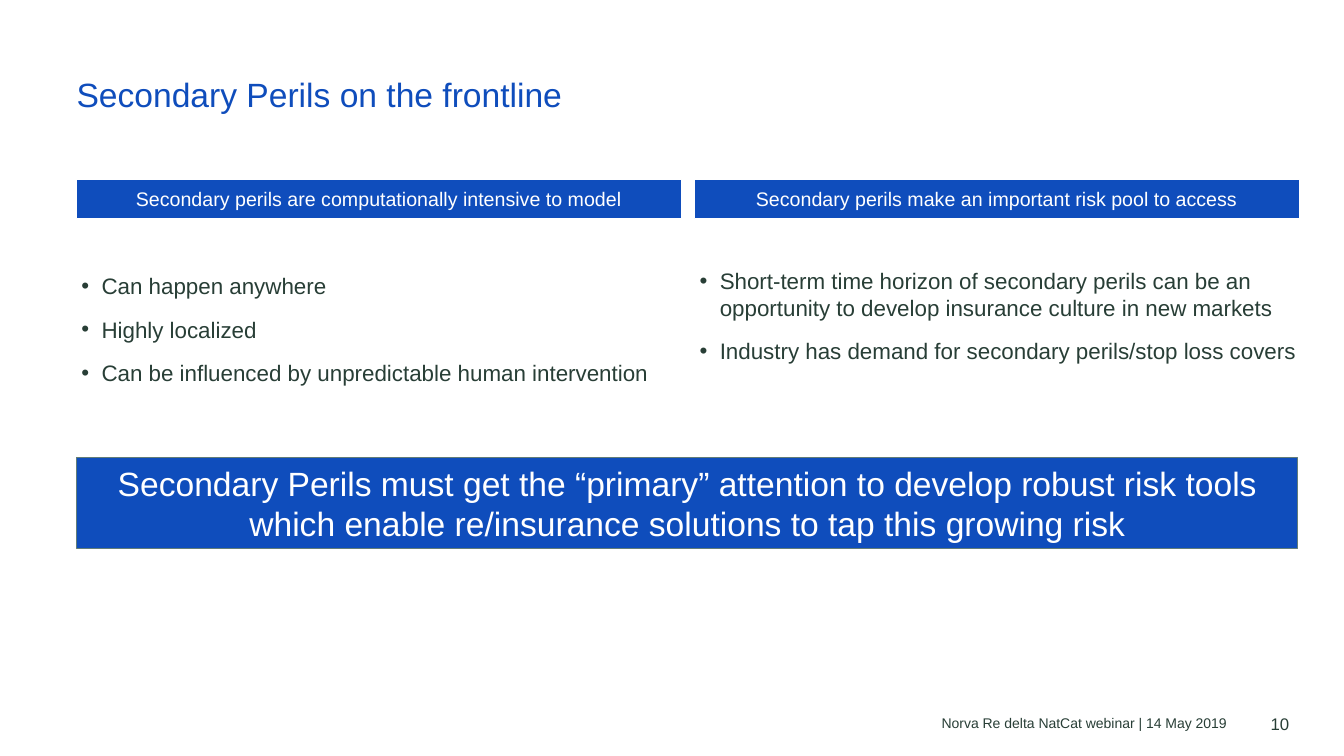
from lxml import etree
from pptx import Presentation
from pptx import util as u
from pptx.dml.color import RGBColor
from pptx.enum import shapes, text
from pptx.oxml.ns import qn

COLOURS = {"blue": "0F4DBC", "ink": "283E36", "white": "FFFFFF", "edge": "627D77"}
LEFT = 1.93
COLUMN_WIDTH = 15.24
COLUMN_STEP = 15.57
HEADER_TOP = 4.52
BULLETS_TOP = 6.73
INSET = 0.25
INDENT = u.Cm(0.51)

COLUMNS = [
    ("Secondary perils are computationally intensive to model",
     ["Can happen anywhere", "Highly localized",
      "Can be influenced by unpredictable human intervention"]),
    ("Secondary perils make an important risk pool to access",
     ["Short-term time horizon of secondary perils can be an opportunity "
      "to develop insurance culture in new markets",
      "Industry has demand for secondary perils/stop loss covers"]),
]


def colour(name):
    return RGBColor.from_string(COLOURS[name])


def set_frame(shape, inset, anchor):
    frame = shape.text_frame
    frame.word_wrap = True
    frame.vertical_anchor = anchor
    frame.margin_left = frame.margin_right = u.Cm(inset)
    frame.margin_top = frame.margin_bottom = u.Cm(inset / 2)
    return frame


def write(para, words, size, ink, align=text.PP_ALIGN.LEFT):
    para.alignment = align
    span = para.add_run()
    span.text = words
    span.font.name = "Arial"
    span.font.size = u.Pt(size)
    span.font.color.rgb = colour(ink)


def add_label(page, box, words, size, ink="ink", align=text.PP_ALIGN.RIGHT,
              anchor=text.MSO_ANCHOR.BOTTOM):
    label = page.shapes.add_textbox(*map(u.Cm, box))
    para = set_frame(label, 0, anchor).paragraphs[0]
    write(para, words, size, ink, align)
    return para


def add_title(page, box, words):
    para = add_label(page, box, words, 24, "blue", text.PP_ALIGN.LEFT, text.MSO_ANCHOR.TOP)
    para.line_spacing = 0.9


def add_banner(page, box, words, size, edge):
    banner = page.shapes.add_shape(shapes.MSO_SHAPE.RECTANGLE, *map(u.Cm, box))
    banner.shadow.inherit = False
    banner.fill.solid()
    banner.fill.fore_color.rgb = colour("blue")
    banner.line.color.rgb = colour(edge)
    banner.line.width = u.Pt(0.75)
    para = set_frame(banner, INSET, text.MSO_ANCHOR.MIDDLE).paragraphs[0]
    write(para, words, size, "white", text.PP_ALIGN.CENTER)


def add_bullets(page, box, items, inset):
    listing = page.shapes.add_textbox(*map(u.Cm, box))
    frame = set_frame(listing, inset, text.MSO_ANCHOR.TOP)
    for index, item in enumerate(items):
        para = frame.add_paragraph() if index else frame.paragraphs[0]
        properties = para._p.get_or_add_pPr()
        properties.set("marL", str(INDENT))
        properties.set("indent", str(-INDENT))
        etree.SubElement(properties, qn("a:buFont")).set("typeface", "Arial")
        etree.SubElement(properties, qn("a:buChar")).set("char", "•")
        if index:
            para.space_before = u.Pt(12)
        write(para, item, 16, "ink")
    return listing


def add_columns(page, left, top):
    (first_heading, first_items), (second_heading, second_items) = COLUMNS
    second_left = left + COLUMN_STEP
    listing = add_bullets(page, (second_left + 0.13, BULLETS_TOP, 15.32, 10.19), second_items, 0)
    listing.fill.solid()
    listing.fill.fore_color.rgb = colour("white")
    add_bullets(page, (left - 0.13, BULLETS_TOP, 15.37, 3.18), first_items, INSET)
    for x, heading in ((left, first_heading), (second_left, second_heading)):
        add_banner(page, (x, top, COLUMN_WIDTH, 0.99), heading, 14, "white")


def add_footer(page, top):
    add_label(page, (9.04, top + 0.08, 21.87, 0.38),
              "Norva Re delta NatCat webinar | 14 May 2019", 10)
    add_label(page, (31.7, top, 0.79, 0.51), "10", 12)


def main():
    deck = Presentation()
    deck.slide_width, deck.slide_height = u.Cm(33.87), u.Cm(19.05)
    page = deck.slides.add_slide(deck.slide_layouts[6])
    add_title(page, (LEFT, 1.98, 30.61, 1.93), "Secondary Perils on the frontline")
    add_columns(page, LEFT, HEADER_TOP)
    add_banner(page, (LEFT, 11.53, 30.78, 2.29),
               "Secondary Perils must get the “primary” attention to develop robust risk tools "
               "which enable re/insurance solutions to tap this growing risk", 24, "edge")
    add_footer(page, 17.98)
    deck.save("out.pptx")


if __name__ == "__main__":
    main()
